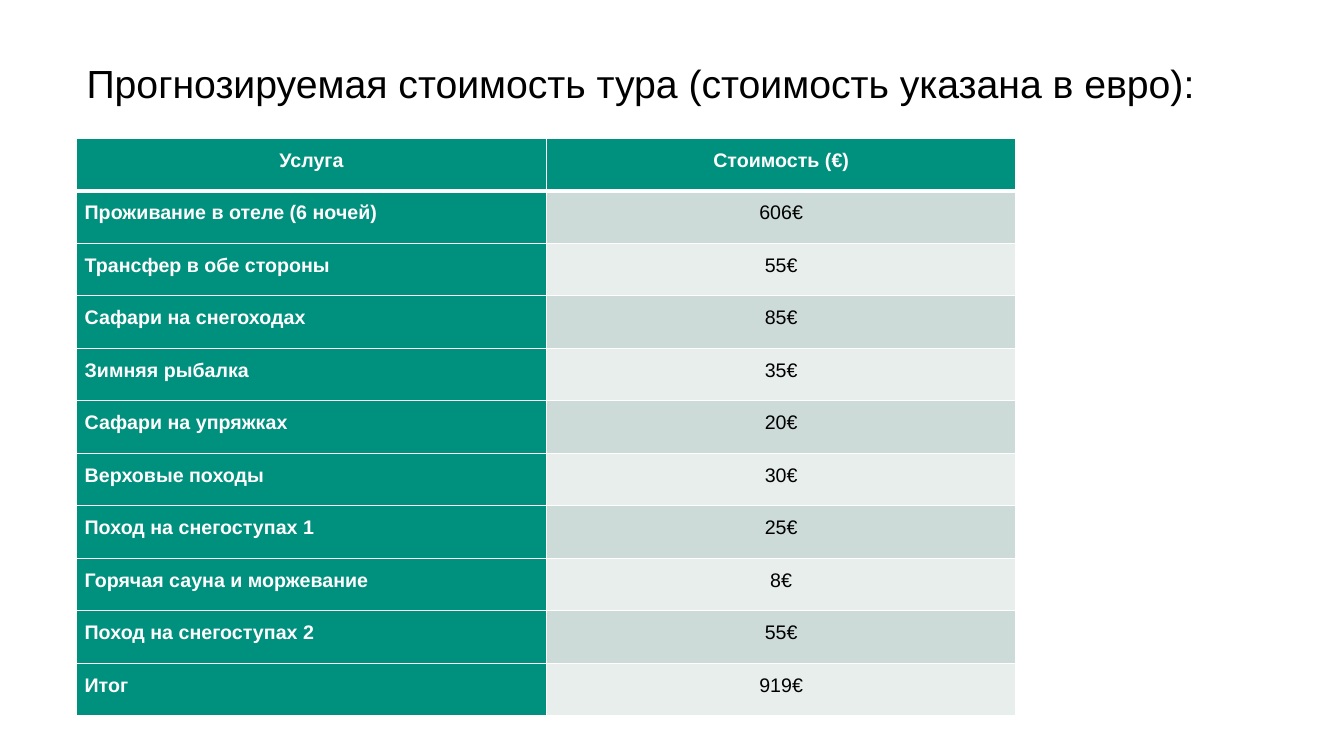
from lxml.etree import SubElement
from pptx import Presentation
from pptx.dml.color import RGBColor
from pptx.enum.text import MSO_ANCHOR, PP_ALIGN
from pptx.oxml.ns import qn
from pptx.util import Inches, Pt

COLOURS = {"green": "00907E", "dark band": "CCDBD8", "light band": "E7EEEC",
           "white": "FFFFFF", "black": "000000"}

TITLE = "Прогнозируемая стоимость тура (стоимость указана в евро):"
HEADER = ("Услуга", "Стоимость (€)")
PRICES = [
    ("Проживание в отеле (6 ночей)", "606€"),
    ("Трансфер в обе стороны", "55€"),
    ("Сафари на снегоходах", "85€"),
    ("Зимняя рыбалка", "35€"),
    ("Сафари на упряжках", "20€"),
    ("Верховые походы", "30€"),
    ("Поход на снегоступах 1", "25€"),
    ("Горячая сауна и моржевание", "8€"),
    ("Поход на снегоступах 2", "55€"),
    ("Итог", "919€"),
]
LEFT = 5.7


class SlideBuilder:
    """Places styled elements; lengths are percentages of the slide's size."""

    font_name = "Arial"

    def __init__(self, deck):
        self.deck = deck
        self.slide = deck.slides.add_slide(deck.slide_layouts[6])

    def area(self, left, top, width, height):
        across, down = self.deck.slide_width / 100, self.deck.slide_height / 100
        return (round(left * across), round(top * down),
                round(width * across), round(height * down))

    def styled_text(self, frame, text, size, colour, bold=False):
        frame.text = text
        para = frame.paragraphs[0]
        for span in para.runs:
            span.font.name = self.font_name
            span.font.size = Pt(size)
            span.font.bold = bold
            span.font.color.rgb = RGBColor.from_string(COLOURS[colour])
        return para

    def title(self, text, left, top, width, height):
        box = self.slide.shapes.add_textbox(*self.area(left, top, width, height))
        box.text_frame.word_wrap = True
        self.styled_text(box.text_frame, text, 28, "black")

    def border(self, cell, side, points):
        line = SubElement(cell._tc.get_or_add_tcPr(), qn(f"a:ln{side}"),
                          w=str(Pt(points)))
        fill = SubElement(line, qn("a:solidFill"))
        SubElement(fill, qn("a:srgbClr"), val=COLOURS["white"])

    def cell(self, cell, text, row, column):
        is_label = row == 0 or column == 0
        cell.margin_left = cell.margin_right = Inches(0.08)
        cell.margin_top = cell.margin_bottom = 0
        cell.vertical_anchor = MSO_ANCHOR.TOP
        para = self.styled_text(cell.text_frame, text, 14,
                                "white" if is_label else "black", is_label)
        para.line_spacing = 1.5
        is_service = row > 0 and column == 0
        para.alignment = PP_ALIGN.JUSTIFY if is_service else PP_ALIGN.CENTER
        # Borders must precede the fill in the cell properties
        for side in "LRTB":
            under_header = (row, side) in ((0, "B"), (1, "T"))
            self.border(cell, side, 3 if under_header else 1)
        band = "dark band" if row % 2 else "light band"
        cell.fill.solid()
        cell.fill.fore_color.rgb = RGBColor.from_string(
            COLOURS["green" if is_label else band])

    def table(self, rows, left, top, width, height):
        table = self.slide.shapes.add_table(
            len(rows), len(rows[0]), *self.area(left, top, width, height)).table
        table.first_col = True
        for row, texts in enumerate(rows):
            for column, text in enumerate(texts):
                self.cell(table.cell(row, column), text, row, column)


def main():
    deck = Presentation()
    deck.slide_width, deck.slide_height = Inches(13.33), Inches(7.5)
    builder = SlideBuilder(deck)
    builder.table([HEADER, *PRICES], LEFT, 18.3, 69.9, 76.4)
    builder.title(TITLE, LEFT, 7.2, 86.7, 7.6)
    deck.save("out.pptx")


if __name__ == "__main__":
    main()
